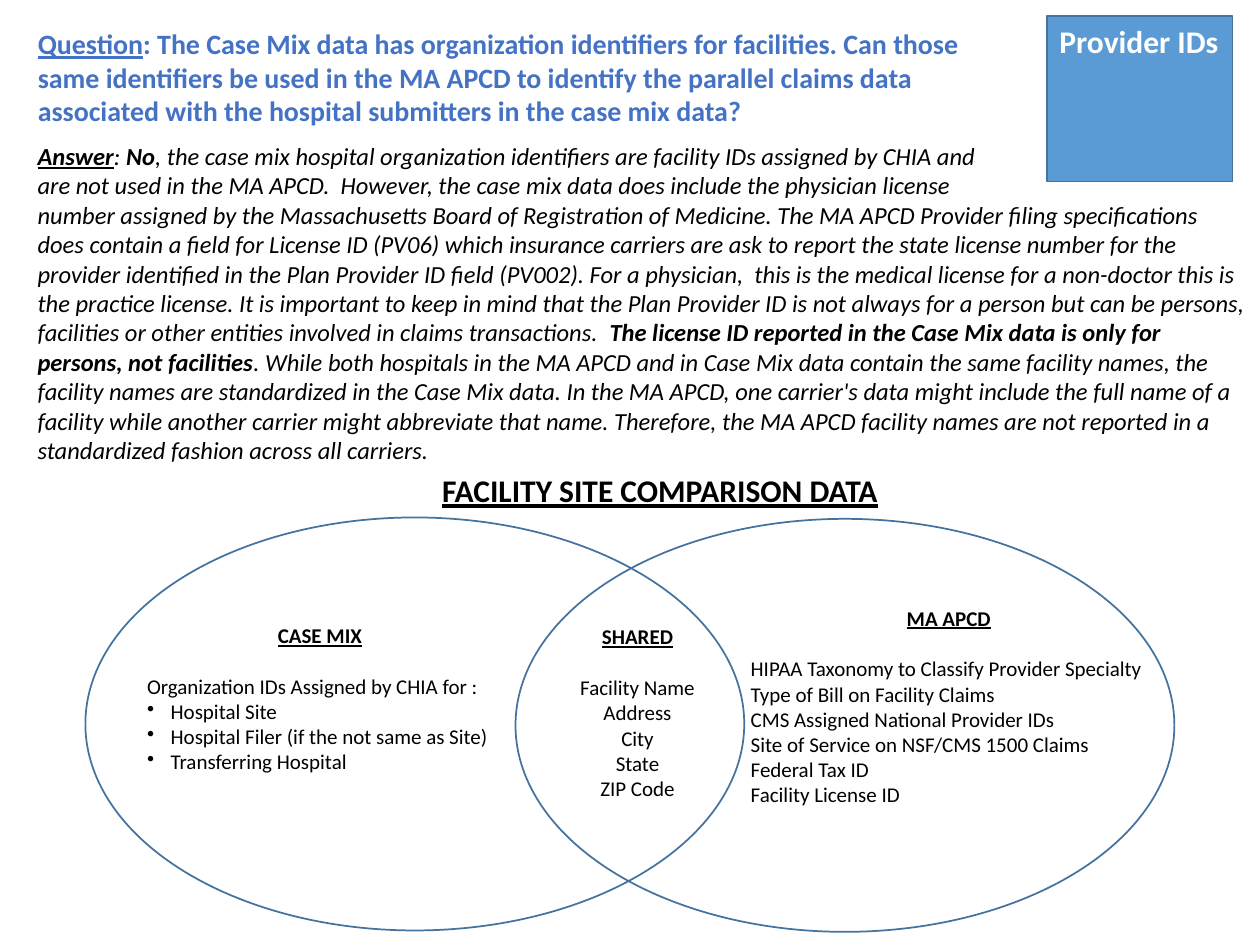
from lxml import etree
from pptx import Presentation
from pptx.dml.color import RGBColor
from pptx.enum.shapes import MSO_SHAPE
from pptx.enum.text import MSO_ANCHOR, MSO_AUTO_SIZE, PP_ALIGN
from pptx.oxml.ns import qn
from pptx.util import Pt

LEFT, CENTER = PP_ALIGN.LEFT, PP_ALIGN.CENTER
TOP, FIXED = MSO_ANCHOR.TOP, MSO_AUTO_SIZE.NONE
RECT, OVAL = MSO_SHAPE.RECTANGLE, MSO_SHAPE.OVAL

COLORS = {"blue": "4472C4", "fill": "5B9BD5", "line": "43739E",
          "black": "000000", "white": "FFFFFF"}

QUESTION = [
    ("Question", "u"),
    (": The Case Mix data has organization identifiers for facilities. Can those same "
     "identifiers be used in the MA APCD to identify the parallel claims data associated "
     "with the hospital submitters in the case mix data?", ""),
]
ANSWER = [
    [("Answer", "bu"), (": ", ""), ("No", "b"),
     (", the case mix hospital organization identifiers are facility IDs assigned "
      "by CHIA and", "")],
    [("are not used in the MA APCD.  However, the case mix data does include the "
      "physician license", "")],
    [("number assigned by the Massachusetts Board of Registration of Medicine. The MA APCD "
      "Provider filing specifications does contain a field for License ID (PV06) which "
      "insurance carriers are ask to report the state license number for the provider "
      "identified in the Plan Provider ID field (PV002). For a physician,  this is the "
      "medical license for a non-doctor this is the practice license. It is important to "
      "keep in mind that the Plan Provider ID is not always for a person but can be "
      "persons, facilities or other entities involved in claims transactions.  ", ""),
     ("The license ID reported in the Case Mix data is only for persons, "
      "not facilities", "b"),
     (". While both hospitals in the MA APCD and in Case Mix data contain the same "
      "facility names, the facility names are standardized in the Case Mix data. In the "
      "MA APCD, one carrier's data might include the full name of a facility while "
      "another carrier might abbreviate that name. Therefore, the MA APCD facility names "
      "are not reported in a standardized fashion across all carriers.", "")],
]
CASE_MIX = ["Organization IDs Assigned by CHIA for :", "• Hospital Site",
            "• Hospital Filer (if the not same as Site)", "• Transferring Hospital"]
APCD = ["HIPAA Taxonomy to Classify Provider Specialty",
        "Type of Bill on Facility Claims", "CMS Assigned National Provider IDs",
        "Site of Service on NSF/CMS 1500 Claims", "Federal Tax ID",
        "Facility License ID"]
SHARED = ["Facility Name", "Address", "City", "State", "ZIP Code"]


class Deck:
    """Holds the style and the current slide."""
    face = "Calibri"
    indent = 13.5

    def __init__(self):
        self.prs = Presentation()
        self.prs.slide_width, self.prs.slide_height = Pt(720), Pt(540)
        self.slide = self.prs.slides.add_slide(self.prs.slide_layouts[5])

    def style(self, par, size, color="black", bold=None, italic=None, under=None,
              align=LEFT):
        par.alignment = align
        font = par.font
        font.name, font.size = self.face, Pt(size)
        font.bold, font.italic, font.underline = bold, italic, under
        font.color.rgb = RGBColor.from_string(COLORS[color])

    def runs(self, par, parts):
        """Add (text, marks) runs; marks holds b for bold and u for underline."""
        for text, marks in parts:
            run = par.add_run()
            run.text = text
            if "b" in marks:
                run.font.bold = True
            if "u" in marks:
                run.font.underline = True

    def bullet(self, par):
        props = par._p.get_or_add_pPr()
        props.set("marL", str(Pt(self.indent)))
        props.set("indent", str(-Pt(self.indent)))
        mark = etree.Element(qn("a:buChar"), char="•")
        props.insert_element_before(mark, "a:tabLst", "a:defRPr", "a:extLst")

    def frame(self, shape, wrap):
        frame = shape.text_frame
        frame.word_wrap, frame.auto_size = wrap, FIXED
        frame.vertical_anchor = TOP
        return frame

    def title(self, box, parts):
        shape = self.slide.shapes.title
        shape.left, shape.top, shape.width, shape.height = map(Pt, box)
        par = self.frame(shape, True).paragraphs[0]
        self.runs(par, parts)
        self.style(par, 16, "blue", bold=True)

    def text(self, box, wrap=False):
        return self.frame(self.slide.shapes.add_textbox(*map(Pt, box)), wrap)

    def prose(self, box, paras):
        frame = self.text(box, True)
        for i, parts in enumerate(paras):
            par = frame.add_paragraph() if i else frame.paragraphs[0]
            self.runs(par, parts)
            self.style(par, 14, italic=True)

    def head(self, box, text):
        par = self.text(box).paragraphs[0]
        par.text = text
        self.style(par, 18, bold=True, under=True)

    def group(self, box, head, items, align=LEFT):
        """Add a centred heading with its items below."""
        frame = self.text(box)
        par = frame.paragraphs[0]
        par.text = head
        self.style(par, 12, bold=True, under=True, align=CENTER)
        par.space_after = Pt(14.65)
        for item in items:
            par = frame.add_paragraph()
            par.text = item.removeprefix("• ")
            self.style(par, 12, align=align)
            if item.startswith("• "):
                self.bullet(par)

    def shape(self, kind, box, fill=None):
        shape = self.slide.shapes.add_shape(kind, *map(Pt, box))
        shape.shadow.inherit = False
        if fill:
            shape.fill.solid()
            shape.fill.fore_color.rgb = RGBColor.from_string(COLORS[fill])
        else:
            shape.fill.background()
        shape.line.color.rgb = RGBColor.from_string(COLORS["line"])
        shape.line.width = Pt(1)
        return shape

    def badge(self, box, text):
        par = self.frame(self.shape(RECT, box, "fill"), False).paragraphs[0]
        par.text = text
        self.style(par, 18, "white", bold=True)


def main():
    deck = Deck()
    deck.title((14.4, 11.5, 566, 65.5), QUESTION)
    deck.prose((14.4, 77, 705.6, 193.7), ANSWER)
    deck.badge((598.3, 9.2, 106, 94.5), "Provider IDs")
    deck.shape(OVAL, (48.8, 295.7, 376.5, 236))
    deck.group((77, 352.1, 211.7, 123.8), "CASE MIX", CASE_MIX)
    deck.group((421.9, 342.2, 240.5, 181.4), "MA APCD", APCD)
    deck.shape(OVAL, (294.6, 296.5, 376.5, 236))
    deck.group((324, 353, 80.6, 123.8), "SHARED", SHARED, CENTER)
    deck.head((245.5, 265.7, 265.7, 28.8), "FACILITY SITE COMPARISON DATA")
    deck.prs.save("out.pptx")


if __name__ == "__main__":
    main()
